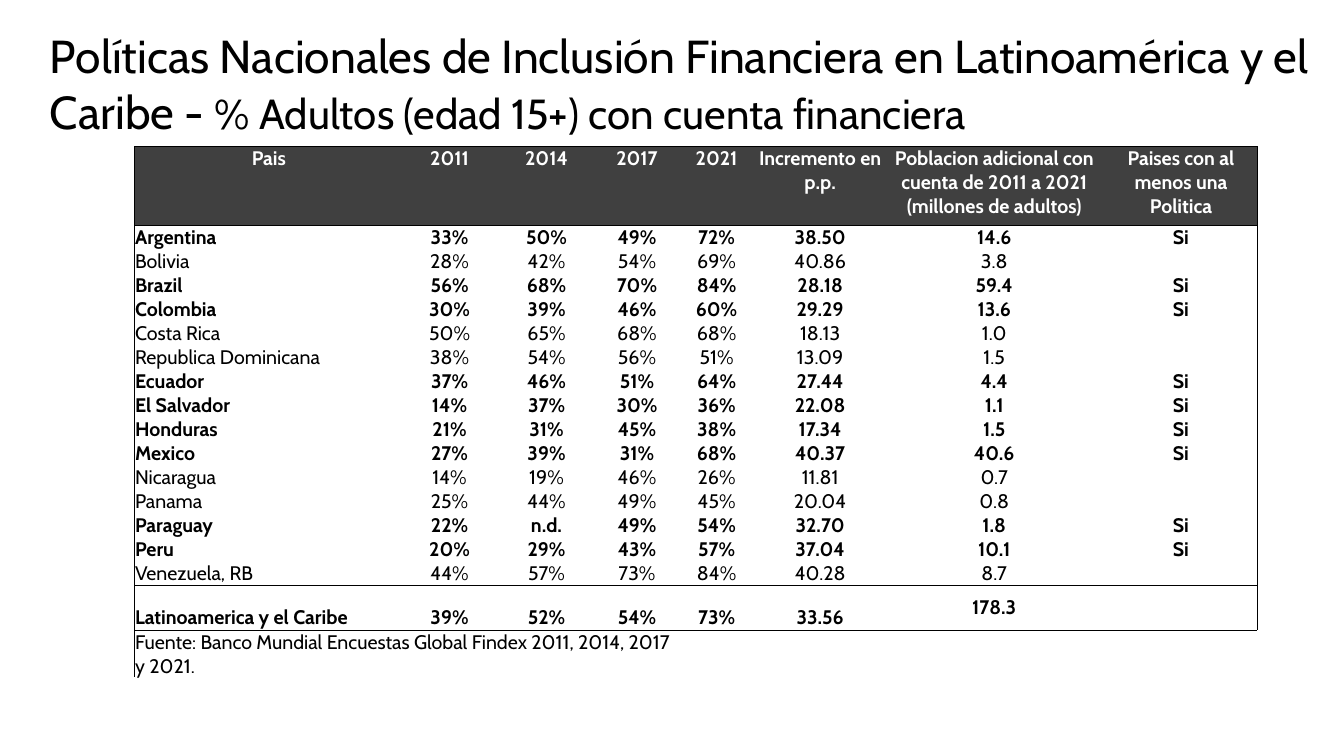
"""Build the financial inclusion table slide for Latin America and the Caribbean."""
from typing import NamedTuple

from lxml.etree import SubElement
from pptx import Presentation
from pptx.dml.color import RGBColor
from pptx.enum.text import MSO_ANCHOR as Anchor, PP_ALIGN as Align
from pptx.oxml.ns import qn
from pptx.util import Pt

FONT = "Cabin"
BLACK, WHITE, HEADER_FILL = "000000", "FFFFFF", "404040"
PLAIN_TABLE_STYLE = "{2D5ABB26-0587-4C30-8999-92F81FD0307C}"
COLUMN_WIDTHS = (383.76, 132.48, 144.72, 113.76, 113.76, 182.16, 315.36, 218.16)
HEADER_HEIGHT, COUNTRY_HEIGHT, FOOT_HEIGHT = 112.32, 31.68, 63.36
TITLE = (
    ("Políticas Nacionales de Inclusión Financiera en Latinoamérica y el Caribe - ", 66),
    ("% Adultos (edad 15+) con cuenta financiera", 60),
)
HEADINGS = (
    "Pais", "2011", "2014", "2017", "2021", "Incremento en p.p.",
    "Poblacion adicional con cuenta de 2011 a 2021\v(millones de adultos)",
    "Paises con al menos una Politica",
)
SOURCE = "Fuente: Banco Mundial Encuestas Global Findex 2011, 2014, 2017 y 2021."


class Country(NamedTuple):
    name: str
    y2011: str
    y2014: str
    y2017: str
    y2021: str
    increase: str
    population: str
    policy: str = ""


COUNTRIES = (
    Country("Argentina", "33%", "50%", "49%", "72%", "38.50", "14.6", "Si"),
    Country("Bolivia", "28%", "42%", "54%", "69%", "40.86", "3.8"),
    Country("Brazil", "56%", "68%", "70%", "84%", "28.18", "59.4", "Si"),
    Country("Colombia", "30%", "39%", "46%", "60%", "29.29", "13.6", "Si"),
    Country("Costa Rica", "50%", "65%", "68%", "68%", "18.13", "1.0"),
    Country("Republica Dominicana", "38%", "54%", "56%", "51%", "13.09", "1.5"),
    Country("Ecuador", "37%", "46%", "51%", "64%", "27.44", "4.4", "Si"),
    Country("El Salvador", "14%", "37%", "30%", "36%", "22.08", "1.1", "Si"),
    Country("Honduras", "21%", "31%", "45%", "38%", "17.34", "1.5", "Si"),
    Country("Mexico", "27%", "39%", "31%", "68%", "40.37", "40.6", "Si"),
    Country("Nicaragua", "14%", "19%", "46%", "26%", "11.81", "0.7"),
    Country("Panama", "25%", "44%", "49%", "45%", "20.04", "0.8"),
    Country("Paraguay", "22%", "n.d.", "49%", "54%", "32.70", "1.8", "Si"),
    Country("Peru", "20%", "29%", "43%", "57%", "37.04", "10.1", "Si"),
    Country("Venezuela, RB", "44%", "57%", "73%", "84%", "40.28", "8.7"),
)
REGION = Country("Latinoamerica y el Caribe", "39%", "52%", "54%", "73%", "33.56", "178.3")


def colour(value: str) -> RGBColor:
    return RGBColor.from_string(value)


def style_font(font, size: float, ink: str, bold: bool = False) -> None:
    font.name, font.size, font.bold = FONT, Pt(size), bold
    font.color.rgb = colour(ink)


def add_title(page) -> None:
    box = page.shapes.add_textbox(Pt(71.28), Pt(28.8), Pt(1848.96), Pt(180))
    frame = box.text_frame
    frame.word_wrap = True
    frame.vertical_anchor = Anchor.MIDDLE
    frame.margin_left = frame.margin_right = frame.margin_top = frame.margin_bottom = 0
    for text, size in TITLE:
        span = frame.paragraphs[0].add_run()
        span.text = text
        style_font(span.font, size, BLACK)


def set_borders(cell, sides: str) -> None:
    properties = cell._tc.get_or_add_tcPr()
    for side in "LRTB":
        line = SubElement(properties, qn(f"a:ln{side}"), w=str(Pt(0.5)))
        if side in sides:
            fill = SubElement(line, qn("a:solidFill"))
            SubElement(fill, qn("a:srgbClr"), val=BLACK)
        else:
            SubElement(line, qn("a:noFill"))


def fill_cell(cell, text: str, align: Align, anchor: Anchor, ink: str, bold: bool) -> None:
    cell.margin_left = cell.margin_right = cell.margin_top = Pt(0.72)
    cell.margin_bottom = 0
    cell.vertical_anchor = anchor
    cell.text_frame.text = text
    for paragraph in cell.text_frame.paragraphs:
        paragraph.alignment = align
        for span in paragraph.runs:
            style_font(span.font, 28, ink, bold)


def add_country_table(page) -> None:
    rows = (HEADINGS, *COUNTRIES, REGION, (SOURCE,) + ("",) * 7)
    region_row, source_row = len(rows) - 2, len(rows) - 1
    heights = (HEADER_HEIGHT, *(COUNTRY_HEIGHT,) * len(COUNTRIES), FOOT_HEIGHT, FOOT_HEIGHT)
    table = page.shapes.add_table(
        len(rows), len(COLUMN_WIDTHS), Pt(192.24), Pt(208.8),
        Pt(sum(COLUMN_WIDTHS)), Pt(sum(heights)),
    ).table
    table.horz_banding = table.first_row = False
    table._tbl.tblPr.find(qn("a:tableStyleId")).text = PLAIN_TABLE_STYLE
    for column, width in zip(table.columns, COLUMN_WIDTHS):
        column.width = Pt(width)
    for row, height in zip(table.rows, heights):
        row.height = Pt(height)
    table.cell(source_row, 0).merge(table.cell(source_row, 3))

    for r, values in enumerate(rows):
        header = r == 0
        bold = header or r == region_row or values[-1] == "Si"
        rules = "T" if r in (0, 1, region_row, source_row) else ""
        rules += "B" if r in (0, region_row - 1, region_row) else ""
        for c, text in enumerate(values):
            cell = table.cell(r, c)
            sides = rules + ("L" if c == 0 else "")
            sides += "R" if c == len(values) - 1 and r != source_row else ""
            set_borders(cell, sides)
            align = Align.CENTER if header or c else Align.LEFT
            anchor = Anchor.TOP if header else Anchor.MIDDLE if c == 6 else Anchor.BOTTOM
            fill_cell(cell, text, align, anchor, WHITE if header else BLACK, bold)
            if header:
                cell.fill.solid()
                cell.fill.fore_color.rgb = colour(HEADER_FILL)
            else:
                cell.fill.background()


def main() -> None:
    deck = Presentation()
    deck.slide_width, deck.slide_height = Pt(1920.24), Pt(1080)
    page = deck.slides.add_slide(deck.slide_layouts[6])
    add_title(page)
    add_country_table(page)
    deck.save("out.pptx")


if __name__ == "__main__":
    main()
